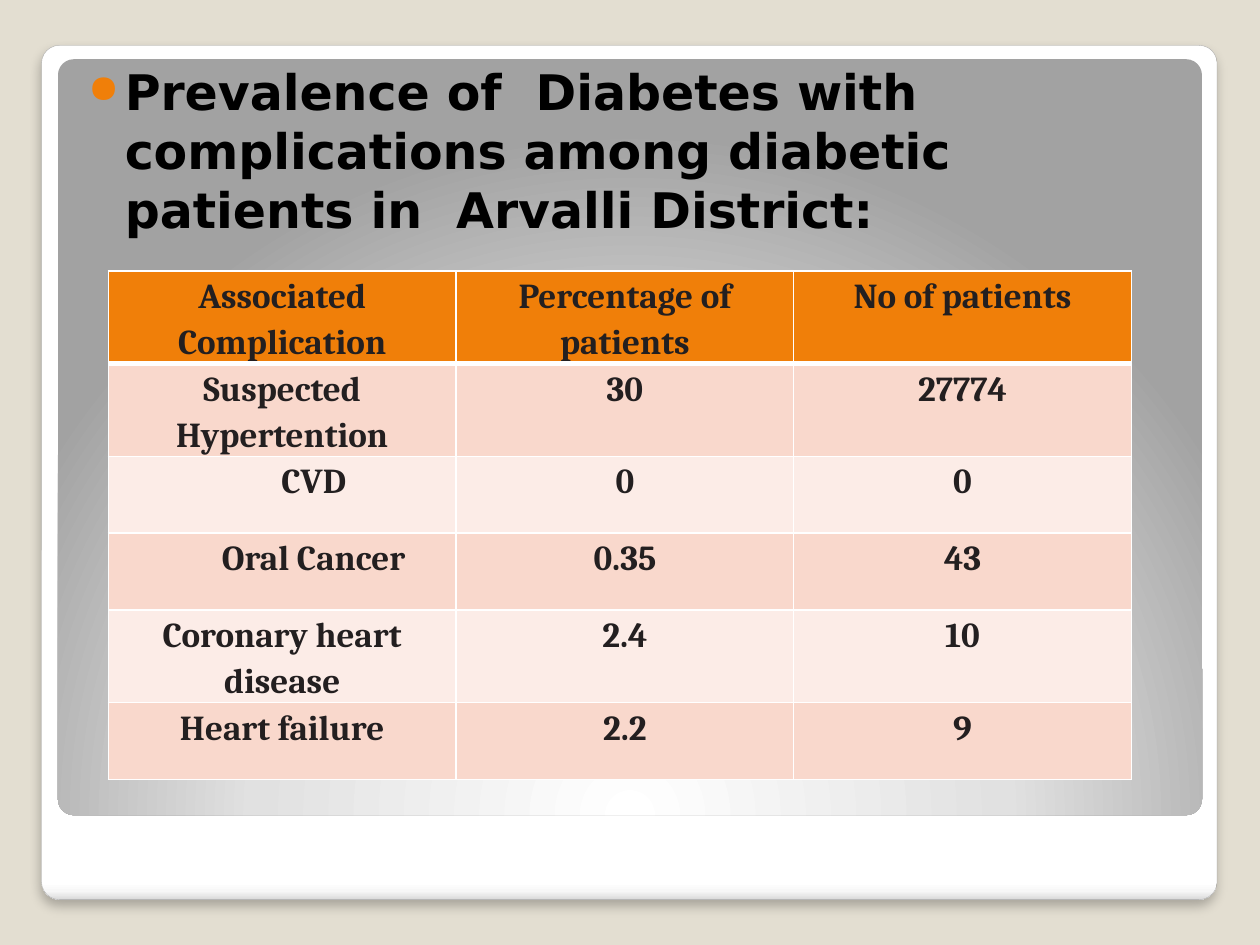
from dataclasses import dataclass

from pptx import Presentation
from pptx.dml.color import RGBColor
from pptx.enum.shapes import MSO_SHAPE as Preset
from pptx.enum.text import MSO_ANCHOR as Anchor, MSO_AUTO_SIZE as AutoSize, PP_ALIGN as Align
from pptx.oxml import parse_xml
from pptx.oxml.ns import nsdecls
from pptx.util import Inches, Pt


@dataclass(frozen=True)
class Theme:
    backdrop: str = "E3DED1"
    edge: str = "A4A4A4"
    accent: str = "F07F09"
    bands: tuple = ("F9D8CC", "FCECE7")
    rule: str = "FFFFFF"
    heading_ink: str = "000000"
    table_ink: str = "231F20"
    heading_font: str = "DejaVu Sans"
    table_font: str = "Cambria"
    heading_size: int = 28
    table_size: int = 20
    card_stops: tuple = ((0, "FFFFFF"), (98, "FFFFFF"), (99, "F7F7F7"), (100, "DADADA"))
    panel_stops: tuple = ((0, "FFFFFF"), (55, "E1E1E1"), (100, "A2A2A2"))


THEME = Theme()
HEADING = "Prevalence of  Diabetes with complications among diabetic patients in  Arvalli District:"
ROWS = [
    ("Associated Complication", "Percentage of patients", "No of patients"),
    ("Suspected Hypertention", "30", "27774"),
    ("CVD", "0", "0"),
    ("Oral Cancer", "0.35", "43"),
    ("Coronary heart disease", "2.4", "10"),
    ("Heart failure", "2.2", "9"),
]
INDENTED = ("CVD", "Oral Cancer")
COLUMN_WIDTHS = (2.76, 2.68, 2.68)
ROW_HEIGHTS = (0.65, 0.65, 0.61, 0.61, 0.65, 0.61)


def apply_format(target, values):
    for name, value in values.items():
        setattr(target, name, value)


def make_xml(body):
    tag, rest = body[1:].split(maxsplit=1) if " " in body.split(">")[0] else (body[1:].split(">")[0], "")
    if rest:
        return parse_xml(f"<{tag} {nsdecls('a')} {rest}")
    return parse_xml(body.replace(f"<{tag}>", f"<{tag} {nsdecls('a')}>", 1))


def solid_xml(color):
    return f'<a:solidFill><a:srgbClr val="{color}"/></a:solidFill>'


def write_text(para, text, font, size, color):
    span = para.add_run()
    span.text = text
    apply_format(span.font, {"name": font, "size": Pt(size), "bold": True})
    span.font.color.rgb = RGBColor.from_string(color)


def add_panel(page, box, stops, shading):
    panel = page.shapes.add_shape(Preset.ROUNDED_RECTANGLE, *map(Inches, box))
    panel.adjustments[0] = 0.021
    panel.shadow.inherit = False
    panel.line.fill.background()
    marks = "".join(
        f'<a:gs pos="{stop * 1000}"><a:srgbClr val="{color}"/></a:gs>' for stop, color in stops
    )
    gradient = make_xml(f'<a:gradFill rotWithShape="1"><a:gsLst>{marks}</a:gsLst>{shading}</a:gradFill>')
    panel.element.spPr.find(".//{*}prstGeom").addnext(gradient)
    return panel


def add_card(page, box):
    card = add_panel(page, box, THEME.card_stops, '<a:lin ang="5400000" scaled="0"/>')
    card.line.color.rgb = RGBColor.from_string(THEME.edge)
    card.line.width = Pt(0.16)
    card.element.spPr.find("{*}effectLst").append(make_xml(
        f'<a:outerShdw blurRad="{Pt(6)}" dist="{Pt(4)}" dir="5400000" algn="t" rotWithShape="0">'
        '<a:srgbClr val="000000"><a:alpha val="25000"/></a:srgbClr></a:outerShdw>'
    ))


def add_inner_panel(page, box):
    return add_panel(
        page, box, THEME.panel_stops,
        '<a:path path="circle"><a:fillToRect l="50000" t="175000" r="50000" b="-75000"/></a:path>',
    )


def place_heading(page, box, backing):
    heading = page.shapes.title
    backing.element.addnext(heading.element)
    apply_format(heading, dict(zip(("left", "top", "width", "height"), map(Inches, box))))
    frame = heading.text_frame
    apply_format(frame, {
        "word_wrap": True, "auto_size": AutoSize.NONE, "vertical_anchor": Anchor.TOP,
        "margin_left": Inches(0.2), "margin_top": Inches(0.1),
        "margin_right": Inches(0.1), "margin_bottom": Inches(0.05),
    })
    para = frame.paragraphs[0]
    apply_format(para, {"alignment": Align.LEFT, "space_before": Pt(2.5)})
    write_text(para, HEADING, THEME.heading_font, THEME.heading_size, THEME.heading_ink)
    props = para._p.get_or_add_pPr()
    props.set("marL", str(Inches(0.29)))
    props.set("indent", str(Inches(-0.29)))
    for bullet in (
        f'<a:buClr><a:srgbClr val="{THEME.accent}"/></a:buClr>',
        '<a:buSzPct val="80000"/>',
        '<a:buChar char="●"/>',
    ):
        props.append(make_xml(bullet))


def set_borders(cell, bottom, top):
    props = cell._tc.get_or_add_tcPr()
    widths = {"lnL": 1, "lnR": 1, "lnT": top, "lnB": bottom}
    for place, (side, width) in enumerate(widths.items()):
        props.insert(place, make_xml(
            f'<a:{side} w="{Pt(width)}">{solid_xml(THEME.rule)}</a:{side}>'
        ))


def fill_cell(cell, text, row):
    cell.fill.solid()
    color = THEME.bands[(row - 1) % 2] if row else THEME.accent
    cell.fill.fore_color.rgb = RGBColor.from_string(color)
    apply_format(cell, {
        "margin_left": Inches(0.07), "margin_right": Inches(0.07),
        "margin_top": 0, "margin_bottom": 0, "vertical_anchor": Anchor.TOP,
    })
    para = cell.text_frame.paragraphs[0]
    apply_format(para, {"alignment": Align.CENTER, "line_spacing": 1.15})
    write_text(para, text, THEME.table_font, THEME.table_size, THEME.table_ink)
    if text in INDENTED:
        para._p.get_or_add_pPr().set("indent", str(Inches(0.5)))
    set_borders(cell, bottom=1 if row else 3, top=3 if row == 1 else 1)


def add_complications_table(page, box):
    table = page.shapes.add_table(len(ROWS), len(COLUMN_WIDTHS), *map(Inches, box)).table
    for column, width in zip(table.columns, COLUMN_WIDTHS):
        column.width = Inches(width)
    for row, height in zip(table.rows, ROW_HEIGHTS):
        row.height = Inches(height)
    for row, texts in enumerate(ROWS):
        for column, text in enumerate(texts):
            fill_cell(table.cell(row, column), text, row)


def main():
    deck = Presentation()
    apply_format(deck, {"slide_width": Inches(10), "slide_height": Inches(7.5)})
    page = deck.slides.add_slide(deck.slide_layouts[5])
    page.background.fill.solid()
    page.background.fill.fore_color.rgb = RGBColor.from_string(THEME.backdrop)
    add_card(page, (0.33, 0.36, 9.33, 6.78))
    panel = add_inner_panel(page, (0.46, 0.47, 9.08, 6))
    place_heading(page, (0.5, 0.39, 9, 6.31), panel)
    add_complications_table(page, (0.86, 2.15, 8.13, sum(ROW_HEIGHTS)))
    deck.save("out.pptx")


if __name__ == "__main__":
    main()
